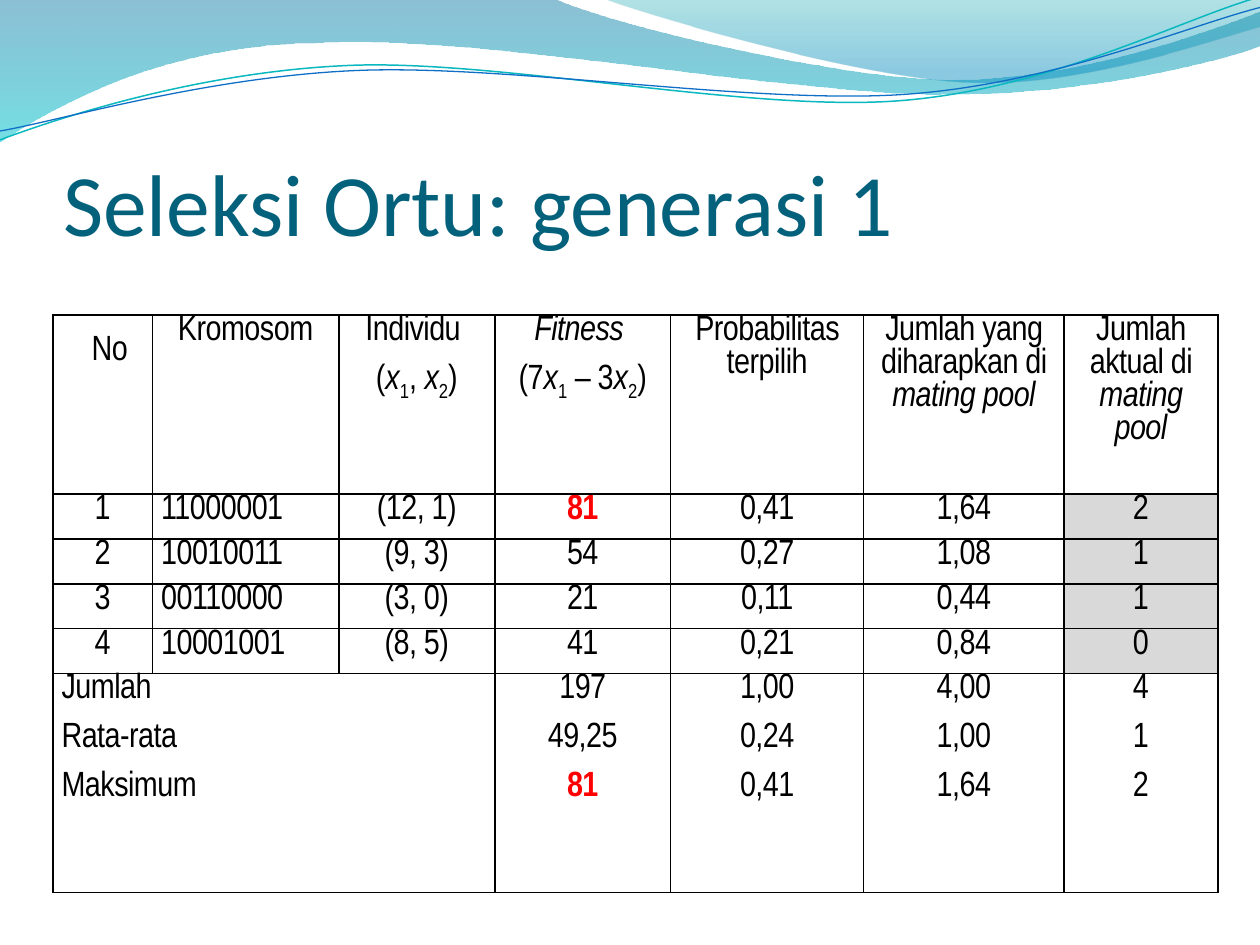
import math

from lxml import etree
from pptx import Presentation
from pptx import util as u
from pptx.dml.color import RGBColor
from pptx.enum import text
from pptx.oxml import ns

BLACK = RGBColor(0x00, 0x00, 0x00)
RED = RGBColor(0xFF, 0x00, 0x00)
GRAY = RGBColor(0xD9, 0xD9, 0xD9)
TITLE_BLUE = RGBColor(0x04, 0x61, 0x7B)
DEEP_BLUE = RGBColor(0x00, 0x74, 0xA1)
CYAN = RGBColor(0x00, 0xC6, 0xCF)
TEAL = RGBColor(0x00, 0xA1, 0xA9)
SKY = RGBColor(0x00, 0x8B, 0xBF)
LINE_TEAL = RGBColor(0x0A, 0xB8, 0xBF)
LINE_BLUE = RGBColor(0x0F, 0x6F, 0xC6)

CENTER, LEFT, JUSTIFY = text.PP_ALIGN.CENTER, text.PP_ALIGN.LEFT, text.PP_ALIGN.JUSTIFY
LINE_TILT = 2.7

BANDS = [
    ([(0, -0.7), (316.8, -0.7),
      (342.7, 12.2, 478.1, 45.4, 545.8, 45.4), (614.2, 45.4, 689.8, 18.7, 720, 6.5),
      (720.7, 25.9),
      (707.8, 31.7, 626.4, 54.7, 537.1, 54), (447.8, 54, 275, 20.2, 185, 24.5),
      (92.9, 25.2, 33.1, 59.8, -0.7, 81.4), (0, -0.7)],
     [(0, DEEP_BLUE, 45), (1, CYAN, 55)]),
    ([(344.9, -0.7),
      (366.5, 7.9, 491, 44.6, 553.7, 46.8), (616.3, 49.7, 691.9, 23, 720, 15.1),
      (720, 0), (344.9, -0.7)],
     [(0, TEAL, 30), (0.8, SKY, 45)]),
]
WAVES = [
    ([(0, 79.9), (34.6, 67, 113.8, 41, 199.4, 37.4),
      (284.4, 33.8, 427, 64.1, 513.4, 57.6), (599.8, 51.1, 675.4, 10.8, 718.6, -1.4)],
     (359.3, 41.4), LINE_TEAL, 0.85),
    ([(0, 74.9), (33.8, 69.1, 118.1, 43.9, 203.8, 40.3),
      (290.2, 36.7, 429.8, 59.8, 516.2, 54), (601.9, 48.2, 677.5, 15.1, 720, 4.3)],
     (359.6, 42.5), LINE_BLUE, 0.75),
]

RUN_STYLES = {
    "plain": {},
    "italic": {"italic": True},
    "sub": {},
    "peak": {"bold": True},
    "large": {"size": u.Pt(36)},
}
X1 = [("x", "italic"), ("1", "sub")]
X2 = [("x", "italic"), ("2", "sub")]
PEAK = [("81", "peak")]

COLUMN_WIDTHS = [56.9, 106.5, 89.2, 100.5, 110.3, 114.5, 87.9]
ROW_HEIGHTS = [102.4] + [25.6] * 4 + [125.1]
HEADER = [
    [[(" ", "large"), "No"]],
    ["Kromosom"],
    ["Individu ", ["(", *X1, ", ", *X2, ")"]],
    [[("Fitness ", "italic")], ["(7", *X1, " – 3", *X2, ")"]],
    ["Probabilitas terpilih"],
    [["Jumlah yang diharapkan di ", ("mating pool", "italic")]],
    [["Jumlah aktual di ", ("mating pool", "italic")]],
]
CHROMOSOMES = [
    ["1", "11000001", "(12, 1)", PEAK, "0,41", "1,64", "2"],
    ["2", "10010011", "(9, 3)", "54", "0,27", "1,08", "1"],
    ["3", "00110000", "(3, 0)", "21", "0,11", "0,44", "1"],
    ["4", "10001001", "(8, 5)", "41", "0,21", "0,84", "0"],
]
SUMMARY = [
    ["Jumlah", "Rata-rata", "Maksimum"],
    [], [],
    ["197", "49,25", PEAK],
    ["1,00", "0,24", "0,41"],
    ["4,00", "1,00", "1,64"],
    ["4", "1", "2"],
]


def apply_format(target, values):
    for name, value in values.items():
        setattr(target, name, value)


def turn(point, center, degrees):
    cos, sin = math.cos(math.radians(degrees)), math.sin(math.radians(degrees))
    x, y = point[0] - center[0], point[1] - center[1]
    return center[0] + x * cos - y * sin, center[1] + x * sin + y * cos


def add_outline(slide, segments, close, center=(0, 0), tilt=0):
    points = [turn(segment[i:i + 2], center, tilt)
              for segment in segments for i in range(0, len(segment), 2)]
    points = [(u.Pt(x), u.Pt(y)) for x, y in points]
    builder = slide.shapes.build_freeform(*points[0], scale=1.0)
    builder.add_line_segments(points[1:], close=close)
    shape = builder.convert_to_shape()
    shape.shadow.inherit = False
    steps = iter(list(shape.element.iter(ns.qn("a:lnTo"))))
    for segment in segments[1:]:
        step = next(steps)
        if len(segment) == 6:
            step.addprevious(curve := etree.Element(ns.qn("a:cubicBezTo")))
            for part in (step, next(steps), next(steps)):
                curve.append(part[0])
                part.getparent().remove(part)
    return shape


def add_band(slide, segments, stops):
    shape = add_outline(slide, segments, True)
    shape.line.fill.background()
    shape.fill.gradient()
    shape.fill.gradient_angle = 270
    for stop, (position, color, _) in zip(shape.fill.gradient_stops, stops):
        stop.position = position
        stop.color.rgb = color
    for element, (_, _, opacity) in zip(shape.element.iter(ns.qn("a:srgbClr")), stops):
        etree.SubElement(element, ns.qn("a:alpha"), val=str(opacity * 1000))


def add_wave(slide, segments, center, color, width):
    shape = add_outline(slide, segments, False, center, LINE_TILT)
    shape.rotation = 360 - LINE_TILT
    shape.fill.background()
    shape.line.color.rgb = color
    shape.line.width = u.Pt(width)


def format_title(slide):
    title = slide.shapes.title
    apply_format(title, {"left": u.Pt(36), "top": u.Pt(55.4),
                         "width": u.Pt(653.8), "height": u.Pt(90)})
    frame = title.text_frame
    apply_format(frame, {"text": "Seleksi Ortu: generasi 1", "word_wrap": True,
                         "auto_size": text.MSO_AUTO_SIZE.NONE,
                         "vertical_anchor": text.MSO_ANCHOR.BOTTOM,
                         "margin_left": 0, "margin_right": 0,
                         "margin_top": u.Pt(3.6), "margin_bottom": 0})
    paragraph = frame.paragraphs[0]
    paragraph.alignment = LEFT
    apply_format(paragraph.runs[0].font, {"name": "Calibri", "size": u.Pt(50)})
    paragraph.runs[0].font.color.rgb = TITLE_BLUE


def add_run(paragraph, content):
    wording, style = (content, "plain") if isinstance(content, str) else content
    run = paragraph.add_run()
    run.text = wording
    apply_format(run.font, {"name": "Arial Narrow", "size": u.Pt(20), "bold": False,
                            "italic": False, **RUN_STYLES[style]})
    run.font.color.rgb = RED if style == "peak" else BLACK
    properties = run._r.get_or_add_rPr()
    properties.set("spc", "-30")
    if style == "sub":
        properties.set("baseline", "-25000")


def add_borders(cell):
    properties = cell._tc.get_or_add_tcPr()
    for side in ("lnL", "lnR", "lnT", "lnB"):
        line = etree.SubElement(properties, ns.qn(f"a:{side}"), w=str(u.Pt(1)))
        fill = etree.SubElement(line, ns.qn("a:solidFill"))
        etree.SubElement(fill, ns.qn("a:srgbClr"), val=str(BLACK))


def fill_cell(cell, paragraphs, alignment, shade=None):
    apply_format(cell, {"margin_left": u.Pt(5), "margin_right": u.Pt(5),
                        "margin_top": 0, "margin_bottom": 0})
    add_borders(cell)
    if shade is None:
        cell.fill.background()
    else:
        cell.fill.solid()
        cell.fill.fore_color.rgb = shade
    frame = cell.text_frame
    for index, contents in enumerate(paragraphs):
        paragraph = frame.add_paragraph() if index else frame.paragraphs[0]
        apply_format(paragraph, {"alignment": alignment, "space_before": u.Pt(3),
                                 "space_after": u.Pt(6)})
        for content in [contents] if isinstance(contents, str) else contents:
            add_run(paragraph, content)


def add_selection_table(slide):
    rows = [HEADER, *([[value] for value in row] for row in CHROMOSOMES), SUMMARY]
    table = slide.shapes.add_table(
        len(rows), len(COLUMN_WIDTHS), u.Pt(30.2), u.Pt(180),
        u.Pt(sum(COLUMN_WIDTHS)), u.Pt(sum(ROW_HEIGHTS))).table
    apply_format(table, {"first_row": False, "horz_banding": False})
    for column, width in zip(table.columns, COLUMN_WIDTHS):
        column.width = u.Pt(width)
    for row, height in zip(table.rows, ROW_HEIGHTS):
        row.height = u.Pt(height)
    last = len(rows) - 1
    table.cell(last, 0).merge(table.cell(last, 2))
    for i, row in enumerate(rows):
        for j, paragraphs in enumerate(row):
            is_chromosome = 0 < i < last
            alignment = CENTER
            if is_chromosome and j == 1:
                alignment = JUSTIFY
            elif i == last and j == 0:
                alignment = LEFT
            shade = GRAY if is_chromosome and j == len(row) - 1 else None
            fill_cell(table.cell(i, j), paragraphs, alignment, shade)


def main():
    presentation = Presentation()
    apply_format(presentation, {"slide_width": u.Pt(720), "slide_height": u.Pt(540)})
    slide = presentation.slides.add_slide(presentation.slide_layouts[5])
    for band in BANDS:
        add_band(slide, *band)
    for wave in WAVES:
        add_wave(slide, *wave)
    add_selection_table(slide)
    format_title(slide)
    presentation.save("out.pptx")


if __name__ == "__main__":
    main()
